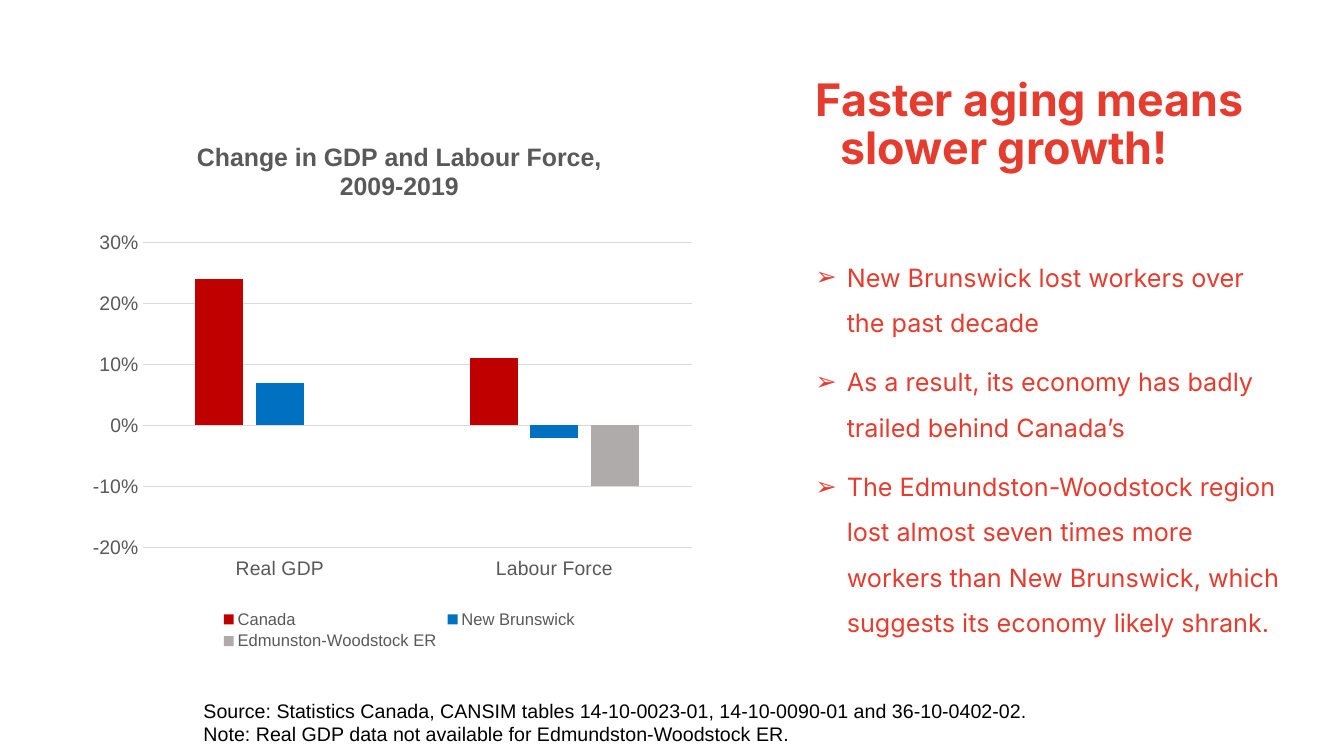
import pptx
import pptx.chart.data
import pptx.dml.color
import pptx.enum.chart
import pptx.oxml
import pptx.oxml.ns
import pptx.util
from dataclasses import dataclass
from lxml import etree

Inches = pptx.util.Inches
Pt = pptx.util.Pt
qn = pptx.oxml.ns.qn


@dataclass(frozen=True)
class Theme:
    accent: str = "E43D30"
    black: str = "000000"
    grey: str = "595959"
    rule: str = "D9D9D9"
    canada: str = "C00000"
    brunswick: str = "0070C0"
    region: str = "AFABAB"
    display: str = "Inter"
    plain: str = "Arial"
    heading: int = 32
    body: int = 18
    label: int = 14
    legend: int = 12


THEME = Theme()


def rgb(colour):
    return pptx.dml.color.RGBColor.from_string(colour)


def style_font(font, face, size, colour, bold=False):
    font.name = face
    font.size = Pt(size)
    font.color.rgb = rgb(colour)
    font.bold = bold


def add_bullet(paragraph):
    properties = paragraph._p.get_or_add_pPr()
    colour = etree.SubElement(properties, qn("a:buClr"))
    etree.SubElement(colour, qn("a:srgbClr"), val=THEME.accent)
    etree.SubElement(properties, qn("a:buFont"), typeface=THEME.plain)
    etree.SubElement(properties, qn("a:buChar"), char="➢")


def add_text(slide, box, lines, face, size, colour, bold=False,
             bullet=False, margin=0, indent=0, spacing=1, before=0):
    frame = slide.shapes.add_textbox(*map(Inches, box)).text_frame
    frame.word_wrap = True
    for index, line in enumerate(lines):
        paragraph = frame.add_paragraph() if index else frame.paragraphs[0]
        paragraph.text = line
        paragraph.line_spacing = spacing
        if index:
            paragraph.space_before = Pt(before)
        properties = paragraph._p.get_or_add_pPr()
        properties.set("marL", str(Inches(margin)))
        properties.set("indent", str(Inches(indent)))
        if bullet:
            add_bullet(paragraph)
        style_font(paragraph.font, face, size, colour, bold)


def place_plot(chart, x, y, width, height):
    plot_area = chart._chartSpace.chart.plotArea
    for existing in plot_area.findall(qn("c:layout")):
        plot_area.remove(existing)
    layout = etree.Element(qn("c:layout"))
    manual = etree.SubElement(layout, qn("c:manualLayout"))
    settings = {"layoutTarget": "inner", "xMode": "edge", "yMode": "edge",
                "x": x, "y": y, "w": width, "h": height}
    for name, value in settings.items():
        etree.SubElement(manual, qn(f"c:{name}"), val=str(value))
    plot_area.insert(0, layout)


def style_axes(chart):
    for axis in (chart.category_axis, chart.value_axis):
        axis.major_tick_mark = pptx.enum.chart.XL_TICK_MARK.NONE
        axis.minor_tick_mark = pptx.enum.chart.XL_TICK_MARK.NONE
        style_font(axis.tick_labels.font, THEME.plain, THEME.label, THEME.grey)
    categories, values = chart.category_axis, chart.value_axis
    categories.tick_label_position = pptx.enum.chart.XL_TICK_LABEL_POSITION.LOW
    values.minimum_scale, values.maximum_scale = -0.2, 0.3
    values.major_unit = 0.1
    values.tick_labels.number_format = "0%"
    values.tick_labels.number_format_is_linked = False
    values.format.line.fill.background()
    values.has_major_gridlines = True
    for line in (categories.format.line, values.major_gridlines.format.line):
        line.color.rgb = rgb(THEME.rule)
        line.width = Pt(0.75)


def add_growth_chart(slide, box, title, categories, series):
    growth = pptx.chart.data.CategoryChartData(number_format="0%")
    growth.categories = categories
    for name, values, _ in series:
        growth.add_series(name, values)
    kind = pptx.enum.chart.XL_CHART_TYPE.COLUMN_CLUSTERED
    chart = slide.shapes.add_chart(kind, *map(Inches, box), growth).chart
    style_font(chart.font, THEME.plain, 10, THEME.black)
    chart.has_title = True
    heading = chart.chart_title.text_frame.paragraphs[0]
    heading.text = title
    style_font(heading.font, THEME.plain, THEME.body, THEME.grey, bold=True)
    chart.chart_title.include_in_layout = False

    chart.has_legend = True
    chart.legend.position = pptx.enum.chart.XL_LEGEND_POSITION.BOTTOM
    chart.legend.include_in_layout = False
    style_font(chart.legend.font, THEME.plain, THEME.legend, THEME.grey)

    columns = chart.plots[0]
    columns.vary_by_categories = False
    columns.gap_width = 219
    columns.overlap = -27
    for column, (_, _, colour) in zip(columns.series, series):
        column.invert_if_negative = False
        column.format.fill.solid()
        column.format.fill.fore_color.rgb = rgb(colour)
    style_axes(chart)
    place_plot(chart, 0.07, 0.23, 0.92, 0.57)


def main():
    deck = pptx.Presentation()
    deck.slide_width, deck.slide_height = Inches(13.33), Inches(7.5)
    slide = deck.slides.add_slide(deck.slide_layouts[6])

    add_text(slide, (7.74, 0.72, 5.09, 1.3),
             ["Faster aging means slower growth!"],
             THEME.display, THEME.heading, THEME.accent, bold=True,
             margin=0.5, indent=-0.25, spacing=0.9)
    add_text(slide, (7.74, 2.4, 5.09, 4.33),
             ["New Brunswick lost workers over the past decade",
              "As a result, its economy has badly trailed behind Canada’s",
              "The Edmundston-Woodstock region lost almost seven times more "
              "workers than New Brunswick, which suggests its economy likely "
              "shrank."],
             THEME.display, THEME.body, THEME.accent, bullet=True,
             margin=0.56, indent=-0.31, spacing=1.5, before=10)
    add_growth_chart(slide, (0.92, 1.19, 6, 5.3),
                     "Change in GDP and Labour Force, 2009-2019",
                     ["Real GDP", "Labour Force"],
                     [("Canada", (0.24, 0.11), THEME.canada),
                      ("New Brunswick", (0.07, -0.02), THEME.brunswick),
                      ("Edmunston-Woodstock ER", (None, -0.1), THEME.region)])
    add_text(slide, (1.92, 6.88, 9.36, 0.57),
             ["Source: Statistics Canada, CANSIM tables 14-10-0023-01, "
              "14-10-0090-01 and 36-10-0402-02.",
              "Note: Real GDP data not available for Edmundston-Woodstock ER."],
             THEME.plain, THEME.label, THEME.black)
    deck.save("out.pptx")


if __name__ == "__main__":
    main()
